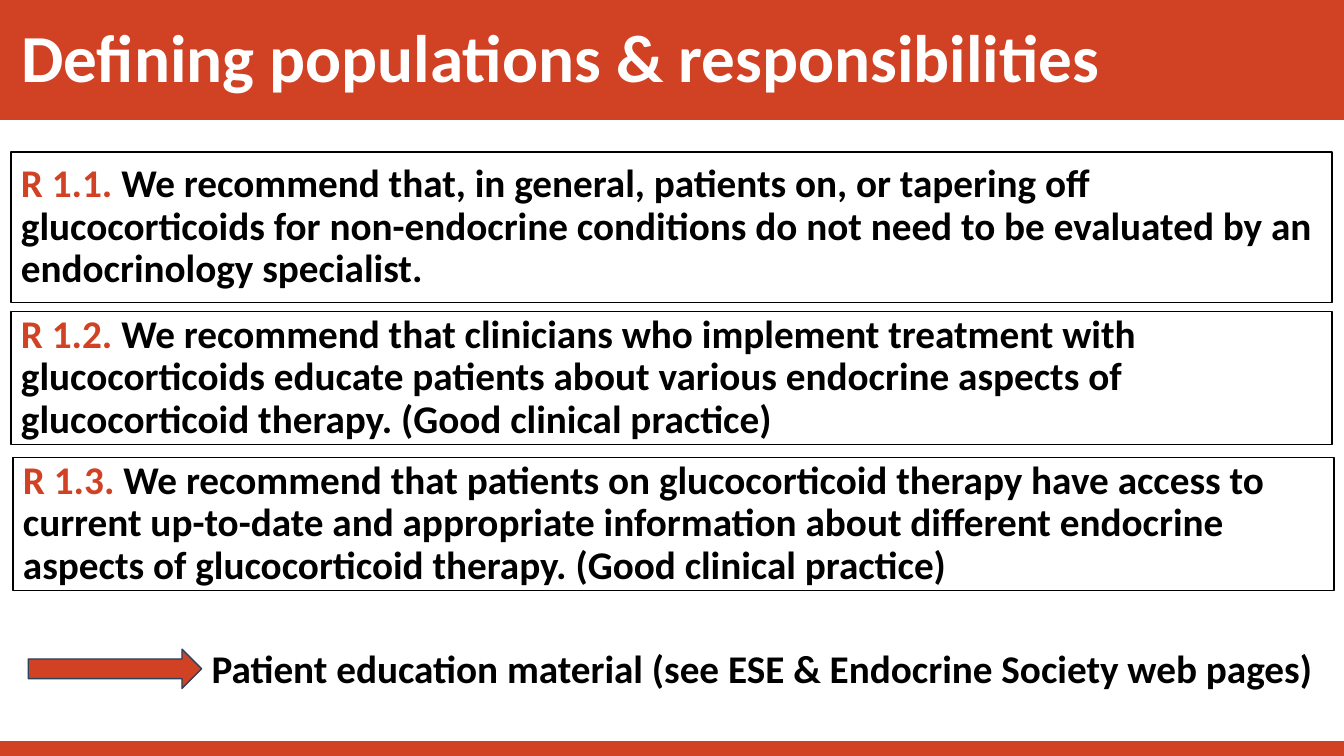
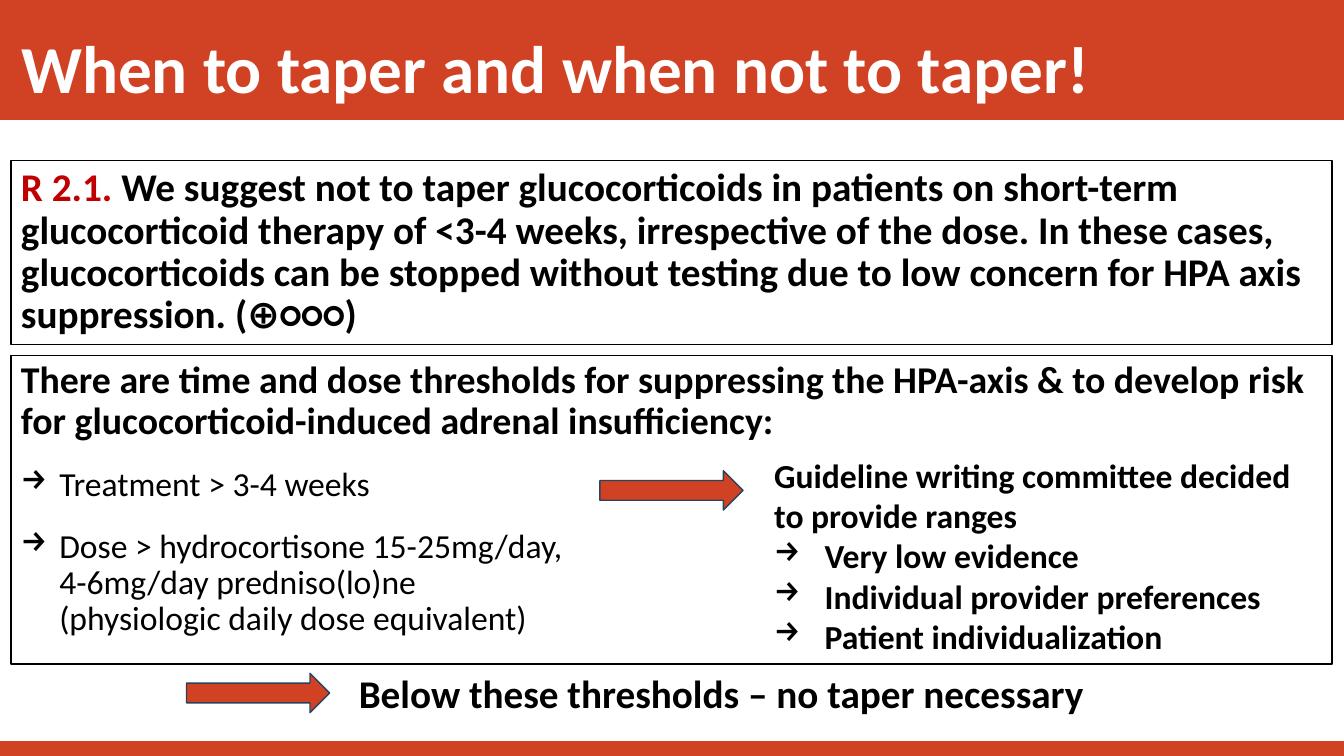
import pptx
import pptx.util
import pptx.dml.color
import pptx.enum.shapes
import pptx.enum.text
import lxml.etree

Inches = pptx.util.Inches
Pt = pptx.util.Pt
MIDDLE = pptx.enum.text.MSO_ANCHOR.MIDDLE
TOP = pptx.enum.text.MSO_ANCHOR.TOP
SHAPES = pptx.enum.shapes.MSO_SHAPE
COLORS = {
    "brand": "D14224",
    "arrow edge": "28445D",
    "label": "C00000",
    "ink": "000000",
    "paper": "FFFFFF",
}
FONT = "Calibri"
PANEL_LEFT = 0.11
PANEL_WIDTH = 13.1


def add_box(slide, preset, place, fill, edge):
    box = slide.shapes.add_shape(preset, *[Inches(length) for length in place])
    box.shadow.inherit = False
    box.fill.solid()
    box.fill.fore_color.rgb = pptx.dml.color.RGBColor.from_string(COLORS[fill])
    box.line.color.rgb = pptx.dml.color.RGBColor.from_string(COLORS[edge])
    box.line.width = Pt(1)
    return box


def write(paragraph, parts, size, bold=True, hanging=0, spacing=None, before=0, after=0):
    paragraph.alignment = pptx.enum.text.PP_ALIGN.LEFT
    paragraph.line_spacing = spacing
    paragraph.space_before = Pt(before)
    paragraph.space_after = Pt(after)
    if hanging:
        properties = paragraph._p.get_or_add_pPr()
        properties.set("marL", str(Inches(hanging)))
        properties.set("indent", str(-Inches(hanging)))
        bullet = lxml.etree.SubElement(properties, pptx.oxml.ns.qn("a:buChar"))
        bullet.set("char", "→")
    for text, color in parts:
        done = len(paragraph.runs)
        for number, line in enumerate(text.split("\n")):
            if number:
                paragraph.add_line_break()
            paragraph.add_run().text = line
        for run in paragraph.runs[done:]:
            run.font.name = FONT
            run.font.size = Pt(size)
            run.font.bold = bold
            run.font.color.rgb = pptx.dml.color.RGBColor.from_string(COLORS[color])


deck = pptx.Presentation()
deck.slide_width = Inches(13.33)
deck.slide_height = Inches(7.5)
title_only = deck.slide_layouts[5]

titles = [
    ("Defining populations & responsibilities", 0.12, 0.96),
    ("When to taper and when not to taper!", 0.18, 1.06),
]
for heading, top, height in titles:
    slide = deck.slides.add_slide(title_only)
    title = slide.shapes.title
    title.left, title.top = Inches(PANEL_LEFT), Inches(top)
    title.width, title.height = Inches(PANEL_WIDTH), Inches(height)
    title.text_frame.vertical_anchor = MIDDLE
    write(title.text_frame.paragraphs[0], [(heading, "paper")], 48, spacing=0.9)
populations, tapering = deck.slides

for top, height in [(0, 1.18), (7.36, 0.14)]:
    band = add_box(populations, SHAPES.RECTANGLE, (0, top, 13.33, height), "brand", "brand")
    title_only.shapes.element.insert(2, band.element)

recommendations = [
    (populations, PANEL_LEFT, 1.51, 1.49, "brand", "R 1.1. ",
     "We recommend that, in general, patients on, or tapering off glucocorticoids for "
     "non-endocrine conditions do not need to be evaluated by an endocrinology specialist."),
    (populations, PANEL_LEFT, 3.09, 1.32, "brand", "R 1.2. ",
     "We recommend that clinicians who implement treatment with glucocorticoids educate patients "
     "about various endocrine aspects of glucocorticoid therapy. (Good clinical practice)"),
    (populations, 0.13, 4.54, 1.32, "brand", "R 1.3. ",
     "We recommend that patients on glucocorticoid therapy have access to current up-to-date and "
     "appropriate information about different endocrine aspects of glucocorticoid therapy. "
     "(Good clinical practice)"),
    (tapering, PANEL_LEFT, 1.59, 1.83, "label", "R 2.1. ",
     "We suggest not to taper glucocorticoids in patients on short-term glucocorticoid therapy of "
     "<3-4 weeks, irrespective of the dose. In these cases, glucocorticoids can be stopped without "
     "testing due to low concern for HPA axis suppression. (⊕○○○)"),
]
for slide, left, top, height, label_color, label, advice in recommendations:
    panel = add_box(slide, SHAPES.RECTANGLE, (left, top, PANEL_WIDTH, height), "paper", "ink")
    panel.text_frame.vertical_anchor = MIDDLE
    write(panel.text_frame.paragraphs[0], [(label, label_color), (advice, "ink")], 28, spacing=0.9)

thresholds = add_box(tapering, SHAPES.RECTANGLE, (PANEL_LEFT, 3.53, PANEL_WIDTH, 3.06), "paper", "ink")
thresholds.text_frame.vertical_anchor = TOP
write(
    thresholds.text_frame.paragraphs[0],
    [("There are time and dose thresholds for suppressing the HPA-axis & to develop risk "
      "for glucocorticoid-induced adrenal insufficiency:", "ink")],
    27, spacing=0.9, after=6,
)
for threshold in [
    "Treatment > 3-4 weeks",
    "Dose > hydrocortisone 15-25mg/day,\n4-6mg/day predniso(lo)ne\n(physiologic daily dose equivalent)",
]:
    write(thresholds.text_frame.add_paragraph(), [(threshold, "ink")], 24,
          bold=False, hanging=0.38, spacing=0.9, before=12, after=6)

committee = tapering.shapes.add_textbox(Inches(7.58), Inches(4.46), Inches(5.58), Inches(2.12))
committee.text_frame.word_wrap = True
write(committee.text_frame.paragraphs[0],
      [("Guideline writing committee decided to provide ranges", "ink")], 24)
for reason in ["Very low evidence", "Individual provider preferences", "Patient individualization"]:
    write(committee.text_frame.add_paragraph(), [(reason, "ink")], 24, hanging=0.5)

conclusions = [
    (populations, 2, 6.34, 11.25, "Patient education material (see ESE & Endocrine Society web pages)"),
    (tapering, 3.46, 6.59, 7.48, "Below these thresholds – no taper necessary"),
]
for slide, left, top, width, conclusion in conclusions:
    closing = slide.shapes.add_textbox(Inches(left), Inches(top), Inches(width), Inches(0.57))
    closing.text_frame.word_wrap = False
    write(closing.text_frame.paragraphs[0], [(conclusion, "ink")], 28)

for slide, left, top, width in [
    (populations, 0.28, 6.44, 1.72),
    (tapering, 1.85, 6.68, 1.42),
    (tapering, 5.95, 4.67, 1.42),
]:
    add_box(slide, SHAPES.RIGHT_ARROW, (left, top, width, 0.39), "brand", "arrow edge")

deck.save("out.pptx")
